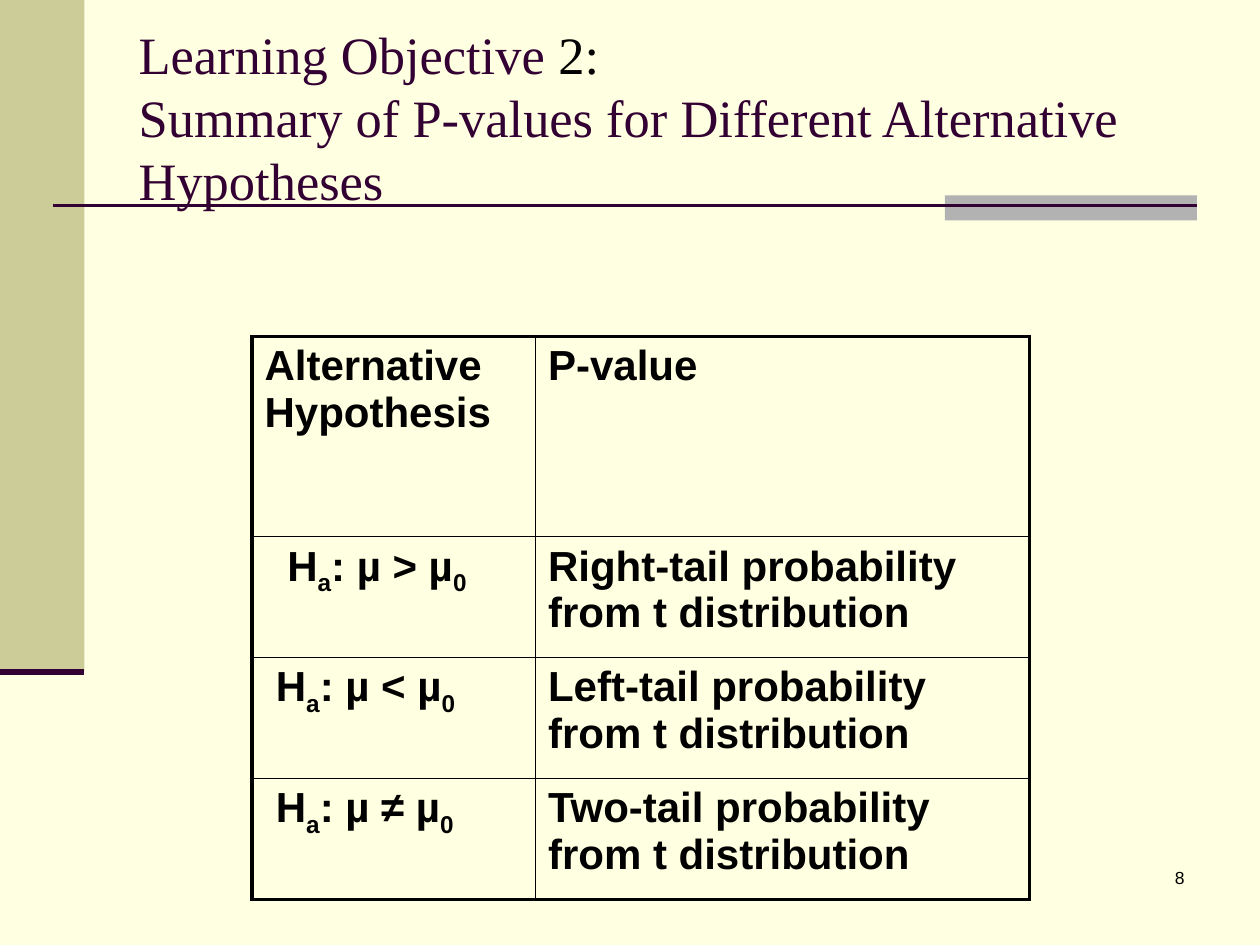
import pptx
import pptx.util
import pptx.dml.color
import pptx.enum.shapes
import pptx.enum.text
import pptx.oxml
import pptx.oxml.ns
import lxml.etree

Inches, Pt = pptx.util.Inches, pptx.util.Pt

THEME = {
    "paper": "FFFFE1", "olive": "CCCC99", "gray": "B2B2B2",
    "plum": "330033", "ink": "000000",
    "title_font": "Times New Roman", "body_font": "Arial",
    "title_size": 30, "table_size": 24, "number_size": 10,
    "outer_line": 2.25, "inner_line": 1,
}

TITLE = [
    ("Learning Objective ", "plum"),
    ("2:\v", "ink"),
    ("Summary of P-values for Different Alternative Hypotheses", "plum"),
]
HEADER = ("Alternative Hypothesis", "P-value")
HYPOTHESES = [(">", "Right", 0.18), ("<", "Left", 0.09), ("≠", "Two", 0.09)]
PAGE_NUMBER = "8"

BARS = [((0, 0, 0.67, 5.33), "olive"), ((7.5, 1.55, 2, 0.2), "gray")]
RULES = [((0.42, 1.63, 9.5, 1.63), 1.5), ((0, 5.33, 0.67, 5.33), 3.5)]
TABLE_AT = (2, 2.67)
COLS = (2.25, 3.92)
ROWS = (1.59, 0.96, 0.96, 0.96)
CELL_MARGIN = 0.1
SUBSCRIPT = "-25000"


def rgb(name):
    return pptx.dml.color.RGBColor.from_string(THEME[name])


def add_run(p, text, font, size, color="ink", bold=False, sub=False):
    r = p.add_run()
    r.text = text
    r.font.name, r.font.size, r.font.bold = THEME[font], Pt(THEME[size]), bold
    r.font.color.rgb = rgb(color)
    if sub:
        r.font._element.set("baseline", SUBSCRIPT)


def add_bar(s, box, color):
    sp = s.shapes.add_shape(pptx.enum.shapes.MSO_SHAPE.RECTANGLE, *map(Inches, box))
    sp.shadow.inherit = False
    sp.fill.solid()
    sp.fill.fore_color.rgb = rgb(color)
    sp.line.fill.background()


def add_rule(s, ends, width):
    line = s.shapes.add_connector(
        pptx.enum.shapes.MSO_CONNECTOR.STRAIGHT, *map(Inches, ends))
    line.line.color.rgb = rgb("plum")
    line.line.width = Pt(width)
    lxml.etree.SubElement(line._element.spPr, pptx.oxml.ns.qn("a:effectLst"))


def set_borders(cell, row, col):
    outer = {"L": col == 0, "R": col == len(COLS) - 1,
             "T": row == 0, "B": row == len(ROWS) - 1}
    tc_pr = cell._tc.get_or_add_tcPr()
    for side, is_outer in outer.items():
        width = Pt(THEME["outer_line" if is_outer else "inner_line"])
        tc_pr.append(pptx.oxml.parse_xml(
            f'<a:ln{side} {pptx.oxml.ns.nsdecls("a")} w="{width}"><a:solidFill>'
            f'<a:srgbClr val="{THEME["ink"]}"/></a:solidFill></a:ln{side}>'))


def add_title(s):
    title = s.shapes.title
    title.left, title.top, title.width, title.height = map(Inches, (1, 0.3, 8.5, 1.25))
    tf = title.text_frame
    tf.word_wrap = True
    tf.auto_size = pptx.enum.text.MSO_AUTO_SIZE.NONE
    tf.vertical_anchor = pptx.enum.text.MSO_ANCHOR.MIDDLE
    p = tf.paragraphs[0]
    p.alignment = pptx.enum.text.PP_ALIGN.LEFT
    p.line_spacing = Pt(36)
    for text, color in TITLE:
        for i, part in enumerate(text.split("\v")):
            if i:
                p.add_line_break()
            if part:
                add_run(p, part, "title_font", "title_size", color)
    s.shapes._spTree.append(title._element)


def add_page_number(s):
    tf = s.shapes.add_textbox(*map(Inches, (7.42, 6.83, 2.08, 0.5))).text_frame
    tf.word_wrap = True
    p = tf.paragraphs[0]
    p.alignment = pptx.enum.text.PP_ALIGN.RIGHT
    add_run(p, PAGE_NUMBER, "body_font", "number_size")


def add_summary_table(s):
    rows = [[([(text, False)], 0) for text in HEADER]]
    for sign, tail, indent in HYPOTHESES:
        formula = [("H", False), ("a", True), (f": µ {sign} µ", False), ("0", True)]
        meaning = [(f"{tail}-tail probability from t distribution", False)]
        rows.append([(formula, indent), (meaning, 0)])

    size = (sum(COLS), sum(ROWS))
    table = s.shapes.add_table(
        len(ROWS), len(COLS), *map(Inches, TABLE_AT + size)).table
    table.first_row = table.horz_banding = False
    for col, width in zip(table.columns, COLS):
        col.width = Inches(width)
    for row, height in zip(table.rows, ROWS):
        row.height = Inches(height)
    for i, row in enumerate(rows):
        for j, (runs, indent) in enumerate(row):
            cell = table.cell(i, j)
            cell.margin_left = Inches(CELL_MARGIN + indent)
            set_borders(cell, i, j)
            cell.fill.background()
            p = cell.text_frame.paragraphs[0]
            for text, sub in runs:
                add_run(p, text, "body_font", "table_size", bold=True, sub=sub)


def main():
    prs = pptx.Presentation()
    prs.slide_width, prs.slide_height = Inches(10), Inches(7.5)
    s = prs.slides.add_slide(prs.slide_layouts[5])
    s.background.fill.solid()
    s.background.fill.fore_color.rgb = rgb("paper")
    for box, color in BARS:
        add_bar(s, box, color)
    for ends, width in RULES:
        add_rule(s, ends, width)
    add_page_number(s)
    add_title(s)
    add_summary_table(s)
    prs.save("out.pptx")


if __name__ == "__main__":
    main()
